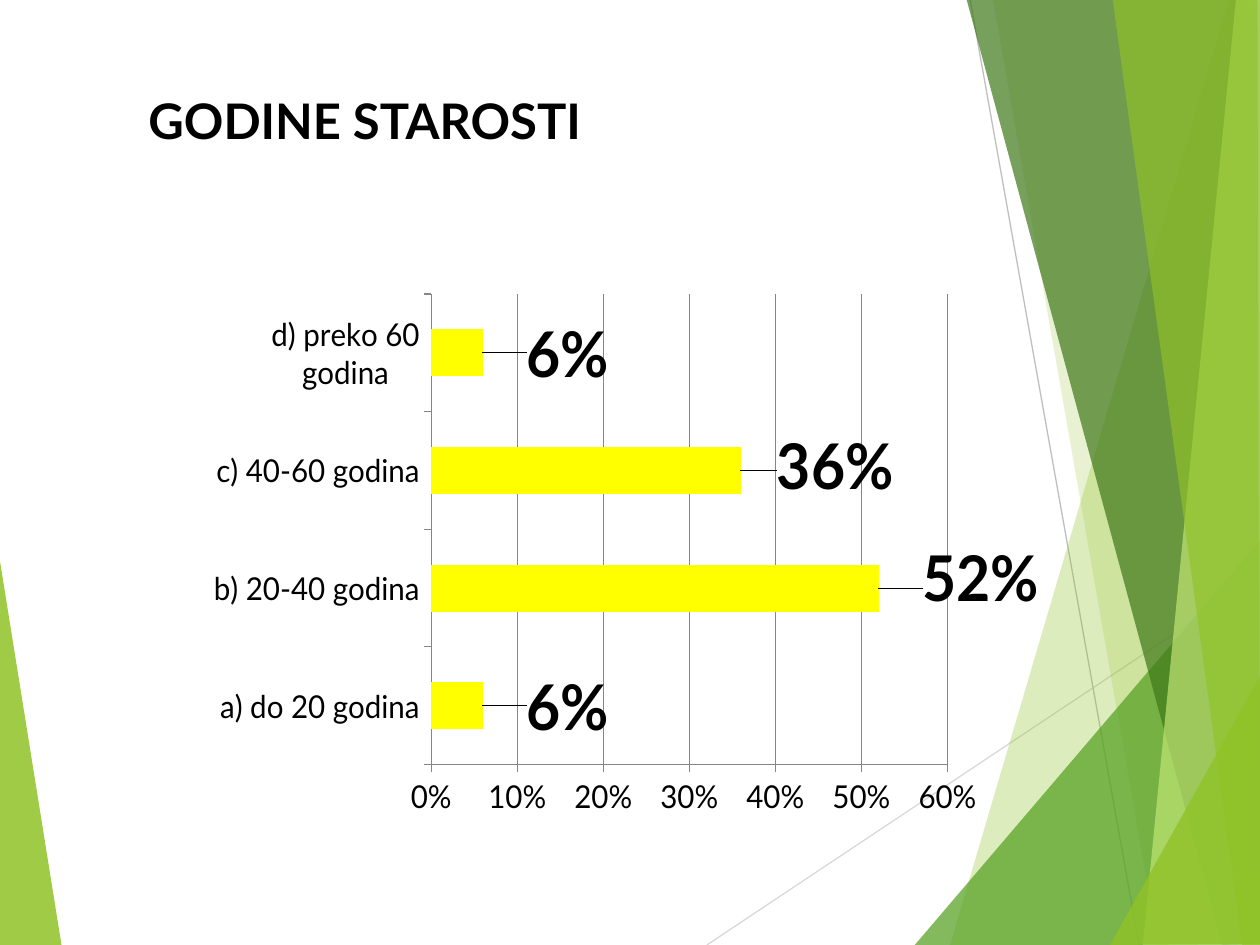
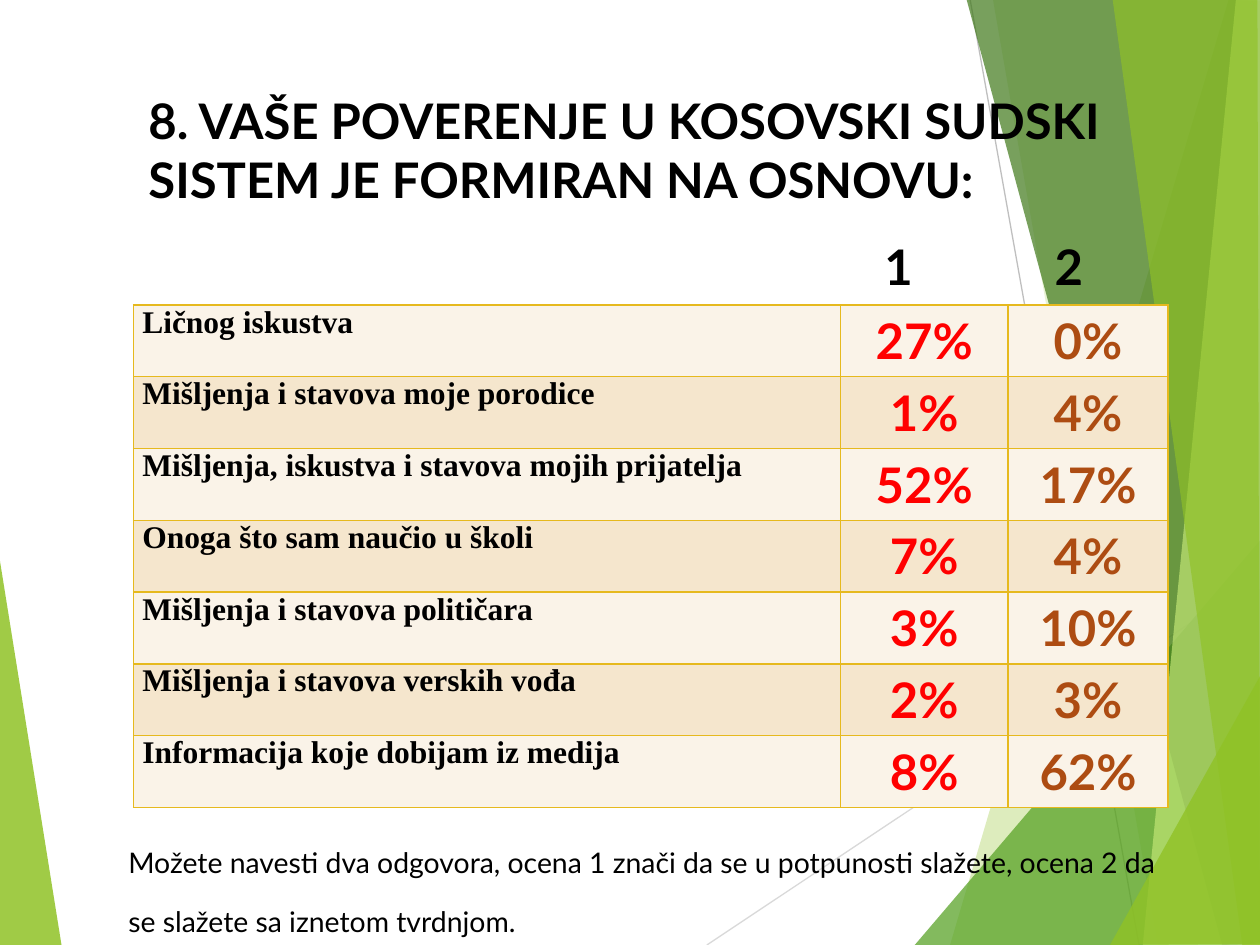
"""Build two survey slides: a bar chart of ages and a table of reasons for trust."""
from dataclasses import dataclass
from typing import Any

from lxml.etree import SubElement
from pptx import Presentation
from pptx.chart.data import CategoryChartData
from pptx.dml.color import RGBColor
from pptx.enum.chart import XL_CHART_TYPE as ChartType, XL_LABEL_POSITION as LabelPosition
from pptx.enum.chart import XL_TICK_MARK as TickMark
from pptx.enum.shapes import MSO_CONNECTOR as Connector
from pptx.enum.text import MSO_ANCHOR as Anchor, PP_ALIGN as Align
from pptx.oxml import parse_xml
from pptx.oxml.ns import nsdecls, qn
from pptx.slide import Slide
from pptx.util import Inches, Pt

COLORS = {
    "black": "000000", "lime": "90C226", "green": "54A021", "forest": "3F7819",
    "pale_lime": "C0E474", "light_gray": "D9D9D9", "gray": "BFBFBF", "axis": "868686",
    "bar": "FFFF00", "first": "FF0000", "second": "AD4C12",
    "border": "E6B91E", "odd_row": "FAF3E8", "even_row": "F5E6CD",
}
HEADING = {"name": "Lato", "size": Pt(28), "bold": True}
NOTE = {"name": "Lato", "size": Pt(28), "bold": False}
REASON = {"name": "Times New Roman", "size": Pt(18), "bold": True}
AXIS = {"name": "Lato", "size": Pt(18), "bold": False}
BAR_LABEL = {"name": "Lato", "size": Pt(36), "bold": True}


@dataclass(frozen=True)
class Facet:
    points: tuple[tuple[float, float], ...]
    color: str
    opacity: int


@dataclass(frozen=True)
class Ray:
    start: tuple[float, float]
    end: tuple[float, float]
    color: str


@dataclass(frozen=True)
class AgeGroup:
    name: str
    share: float
    shift: tuple[float, float]


@dataclass(frozen=True)
class Reason:
    text: str
    first: str
    second: str


BACKDROP = (
    Facet(((-0.01, 4.39), (0.49, 7.51), (-0.01, 7.5)), "lime", 85),
    Ray((5.61, 7.5), (10.01, 4.57), "light_gray"),
    Ray((7.7, 0), (9.04, 7.5), "gray"),
    Facet(((9.75, 0), (7.54, 7.5), (10.02, 7.51), (10.01, 0.01)), "lime", 30),
    Facet(((7.88, -0.01), (9.19, 7.5), (10.01, 7.5), (10.01, -0.01)), "lime", 20),
    Facet(((7.26, 7.5), (10, 4.29), (10.01, 7.5)), "green", 72),
    Facet(((7.67, -0.01), (9.7, 7.5), (10.01, 7.49), (10.01, -0.01)), "forest", 70),
    Facet(((9.81, -0.01), (9.07, 7.5), (10.01, 7.5), (10, -0.01)), "pale_lime", 70),
    Facet(((8.83, -0.01), (9.86, 7.5), (10, 7.5), (9.98, -0.01)), "lime", 65),
    Facet(((8.81, 7.5), (10.01, 5.35), (10.01, 7.49)), "lime", 80),
)
AGE_GROUPS = (
    AgeGroup("a) do 20 godina", 0.06, (0.05, 0)),
    AgeGroup("b) 20-40 godina", 0.52, (0.05, -0.02)),
    AgeGroup("c) 40-60 godina", 0.36, (0.04, -0.01)),
    AgeGroup("d) preko 60 godina", 0.06, (0.05, 0)),
)
REASONS = (
    Reason("Ličnog iskustva", "27%", "0%"),
    Reason("Mišljenja i stavova moje porodice", "1%", "4%"),
    Reason("Mišljenja, iskustva i stavova mojih prijatelja", "52%", "17%"),
    Reason("Onoga što sam naučio u školi", "7%", "4%"),
    Reason("Mišljenja i stavova političara", "3%", "10%"),
    Reason("Mišljenja i stavova verskih vođa", "2%", "3%"),
    Reason("Informacija koje dobijam iz medija", "8%", "62%"),
)


def rgb(color: str) -> RGBColor:
    return RGBColor.from_string(COLORS[color])


def set_values(target: Any, values: dict[str, Any]) -> None:
    for name, value in values.items():
        setattr(target, name, value)


def style_font(font: Any, values: dict[str, Any], color: str = "black") -> None:
    set_values(font, values)
    font.color.rgb = rgb(color)


def paint(target: Any, color: str) -> None:
    target.fill.solid()
    target.fill.fore_color.rgb = rgb(color)


def style_line(line: Any, color: str) -> None:
    line.color.rgb = rgb(color)
    line.width = Pt(0.75)


def draw_facet(page: Slide, facet: Facet) -> None:
    corners = [(Inches(x), Inches(y)) for x, y in facet.points]
    builder = page.shapes.build_freeform(*corners[0])
    builder.add_line_segments(corners[1:], close=True)
    shape = builder.convert_to_shape()
    shape.shadow.inherit = False
    shape.line.fill.background()
    paint(shape, facet.color)
    tint = shape.element.spPr.find(qn("a:solidFill"))[0]
    SubElement(tint, qn("a:alpha"), val=str(facet.opacity * 1000))


def draw_ray(page: Slide, ray: Ray) -> None:
    ends = [Inches(value) for value in (*ray.start, *ray.end)]
    connector = page.shapes.add_connector(Connector.STRAIGHT, *ends)
    style_line(connector.line, ray.color)
    SubElement(connector.element.spPr, qn("a:effectLst"))


def add_text(page: Slide, text: str, place: tuple[float, ...], style: dict[str, Any]) -> Any:
    box = page.shapes.add_textbox(*map(Inches, place))
    box.text_frame.word_wrap = True
    span = box.text_frame.paragraphs[0].add_run()
    span.text = text
    style_font(span.font, style)
    return box


def add_page(deck: Any, title: str, title_height: float) -> Slide:
    page = deck.slides.add_slide(deck.slide_layouts[6])
    for part in BACKDROP:
        if isinstance(part, Facet):
            draw_facet(page, part)
        else:
            draw_ray(page, part)
    add_text(page, title, (1.08, 0.67, 8.5, title_height), HEADING)
    return page


def place_manually(parent: Any, index: int, settings: dict[str, Any]) -> None:
    for former in parent.findall(qn("c:layout")):
        parent.remove(former)
    layout = parse_xml(f"<c:layout {nsdecls('c')}><c:manualLayout/></c:layout>")
    for name, value in settings.items():
        SubElement(layout[0], qn(f"c:{name}"), val=str(value))
    parent.insert(index, layout)


def add_age_chart(page: Slide) -> None:
    data = CategoryChartData(number_format="0%")
    data.categories = [group.name for group in AGE_GROUPS]
    data.add_series("Series 1", [group.share for group in AGE_GROUPS])
    place = map(Inches, (1.58, 2.25, 6.67, 4.44))
    chart = page.shapes.add_chart(ChartType.BAR_CLUSTERED, *place, data).chart
    set_values(chart, {"has_legend": False, "has_title": False})
    style_font(chart.font, AXIS)
    place_manually(chart.plots[0]._element.getparent(), 0, {
        "layoutTarget": "inner", "xMode": "edge", "yMode": "edge",
        "x": 0.295, "y": 0.019, "w": 0.656, "h": 0.841})

    for axis in (chart.category_axis, chart.value_axis):
        set_values(axis, {"major_tick_mark": TickMark.OUTSIDE, "minor_tick_mark": TickMark.NONE})
        style_line(axis.format.line, "axis")
        style_font(axis.tick_labels.font, AXIS)
    set_values(chart.value_axis, {"minimum_scale": 0, "maximum_scale": 0.6,
                                  "major_unit": 0.1, "has_major_gridlines": True})
    set_values(chart.value_axis.tick_labels,
               {"number_format": "0%", "number_format_is_linked": False})
    style_line(chart.value_axis.major_gridlines.format.line, "axis")

    plot = chart.plots[0]
    set_values(plot, {"gap_width": 150, "vary_by_categories": False})
    bars = plot.series[0]
    paint(bars.format, "bar")
    set_values(bars.data_labels, {"show_value": True, "number_format": "0%",
                                  "number_format_is_linked": False,
                                  "position": LabelPosition.OUTSIDE_END})
    style_font(bars.data_labels.font, BAR_LABEL)
    for index in range(len(AGE_GROUPS)):
        label = bars.points[index].data_label
        style_font(label.font, BAR_LABEL)
        label.position = LabelPosition.OUTSIDE_END
    for group, label in zip(AGE_GROUPS, bars._element.iter(qn("c:dLbl"))):
        place_manually(label, 1, dict(zip("xy", group.shift)))


def add_borders(cell: Any) -> None:
    properties = cell._tc.get_or_add_tcPr()
    for side in "LRTB":
        edge = SubElement(properties, qn(f"a:ln{side}"), w=str(Pt(1)))
        fill = SubElement(edge, qn("a:solidFill"))
        SubElement(fill, qn("a:srgbClr"), val=COLORS["border"])


def fill_cell(cell: Any, text: str, style: dict[str, Any], color: str, align: Align) -> None:
    para = cell.text_frame.paragraphs[0]
    para.alignment = align
    span = para.add_run()
    span.text = text
    style_font(span.font, style, color)


def add_reason_table(page: Slide) -> None:
    place = map(Inches, (1.06, 2.42, 8.21, 4))
    table = page.shapes.add_table(len(REASONS), 3, *place).table
    set_values(table, {"first_row": False, "horz_banding": False})
    for column, width in zip(table.columns, (5.61, 1.33, 1.27)):
        column.width = Inches(width)
    for index, reason in enumerate(REASONS):
        table.rows[index].height = Inches(0.57)
        cells = table.rows[index].cells
        for cell in cells:
            add_borders(cell)
            paint(cell, "even_row" if index % 2 else "odd_row")
        set_values(cells[0], {"margin_left": Inches(0.07), "margin_right": Inches(0.07),
                              "margin_top": 0, "margin_bottom": 0,
                              "vertical_anchor": Anchor.TOP})
        fill_cell(cells[0], reason.text, REASON, "black", Align.LEFT)
        fill_cell(cells[1], reason.first, HEADING, "first", Align.CENTER)
        fill_cell(cells[2], reason.second, HEADING, "second", Align.CENTER)


def add_column_numbers(page: Slide) -> None:
    box = add_text(page, "1\t2", (6.75, 1.83, 2.33, 0.57), HEADING)
    box.text_frame.margin_left = Inches(0.27)
    stops = SubElement(box.text_frame.paragraphs[0]._p.get_or_add_pPr(), qn("a:tabLst"))
    SubElement(stops, qn("a:tab"), pos=str(Inches(1.35)), algn="l")


def add_note(page: Slide) -> None:
    text = ("Možete navesti dva odgovora, ocena 1 znači da se u potpunosti slažete, "
            "ocena 2 da se slažete sa iznetom tvrdnjom.")
    box = add_text(page, text, (0.92, 6.61, 8.42, 0.89), NOTE)
    span = box.text_frame.paragraphs[0].runs[0]
    span._r.get_or_add_rPr().set("baseline", "30000")


def main() -> None:
    deck = Presentation()
    set_values(deck, {"slide_width": Inches(10), "slide_height": Inches(7.5)})
    add_age_chart(add_page(deck, "GODINE STAROSTI", 0.57))
    trust = add_page(
        deck, "8. VAŠE POVERENJE U KOSOVSKI SUDSKI SISTEM JE FORMIRAN NA OSNOVU:", 1.04)
    add_reason_table(trust)
    add_column_numbers(trust)
    add_note(trust)
    deck.save("out.pptx")


if __name__ == "__main__":
    main()
